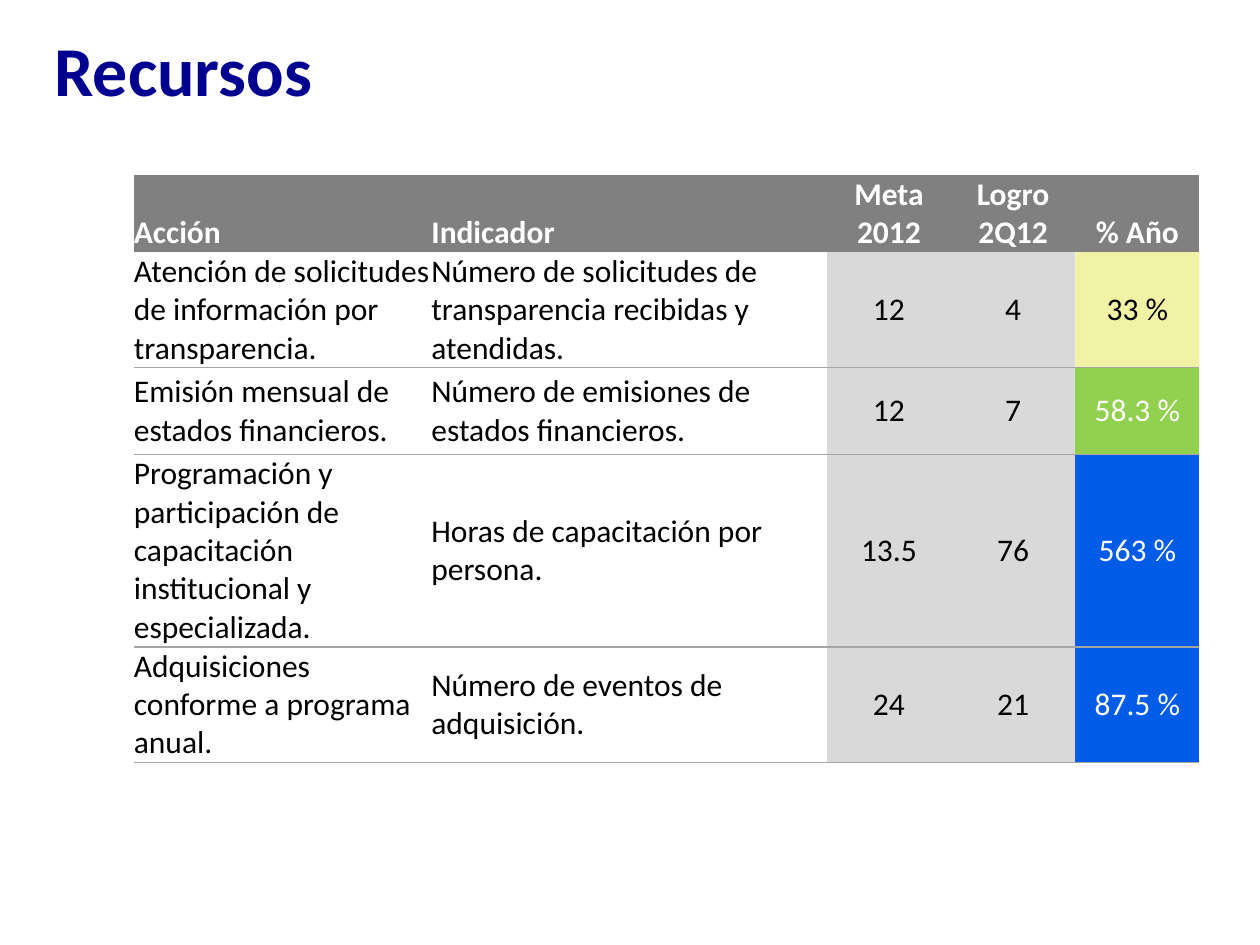
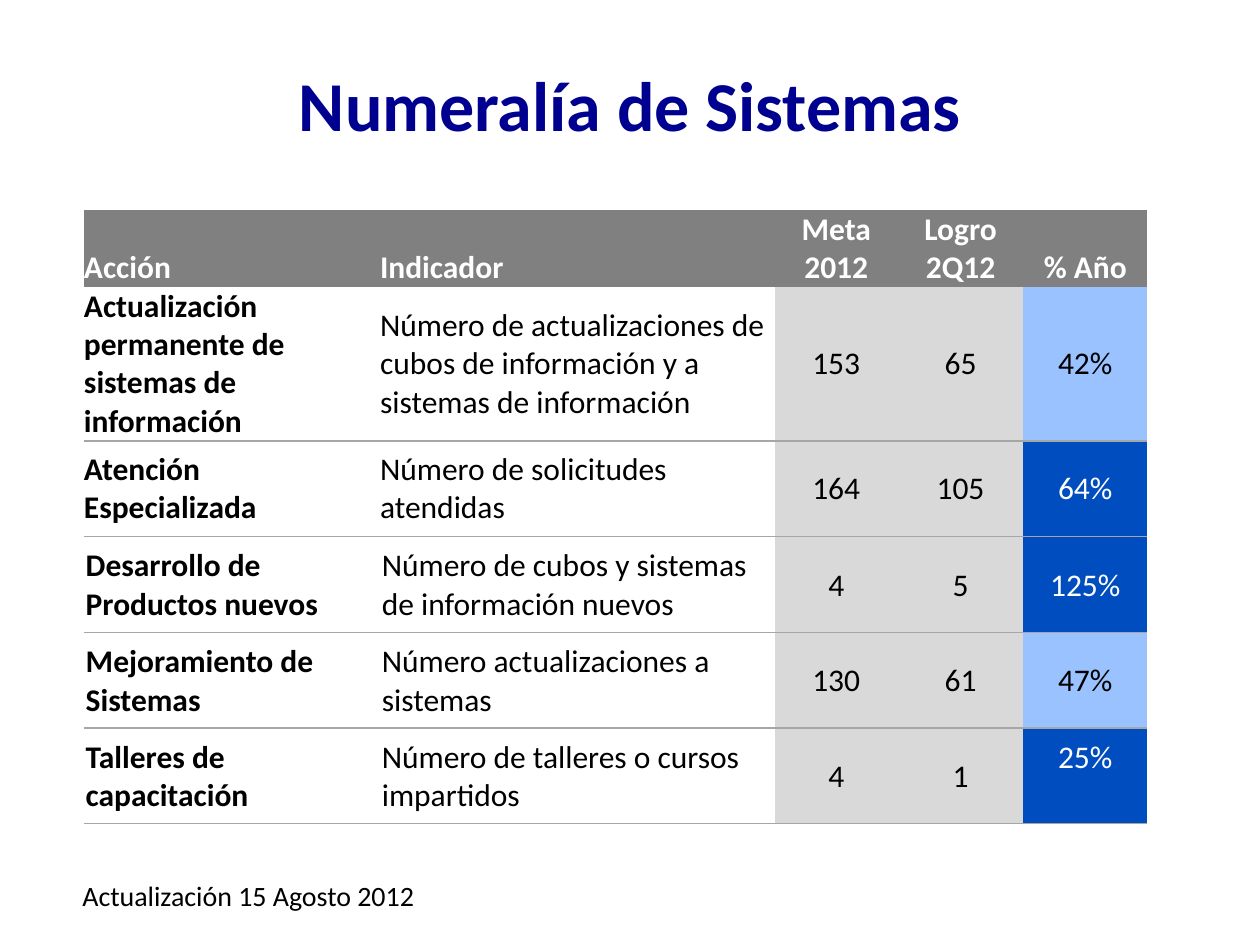
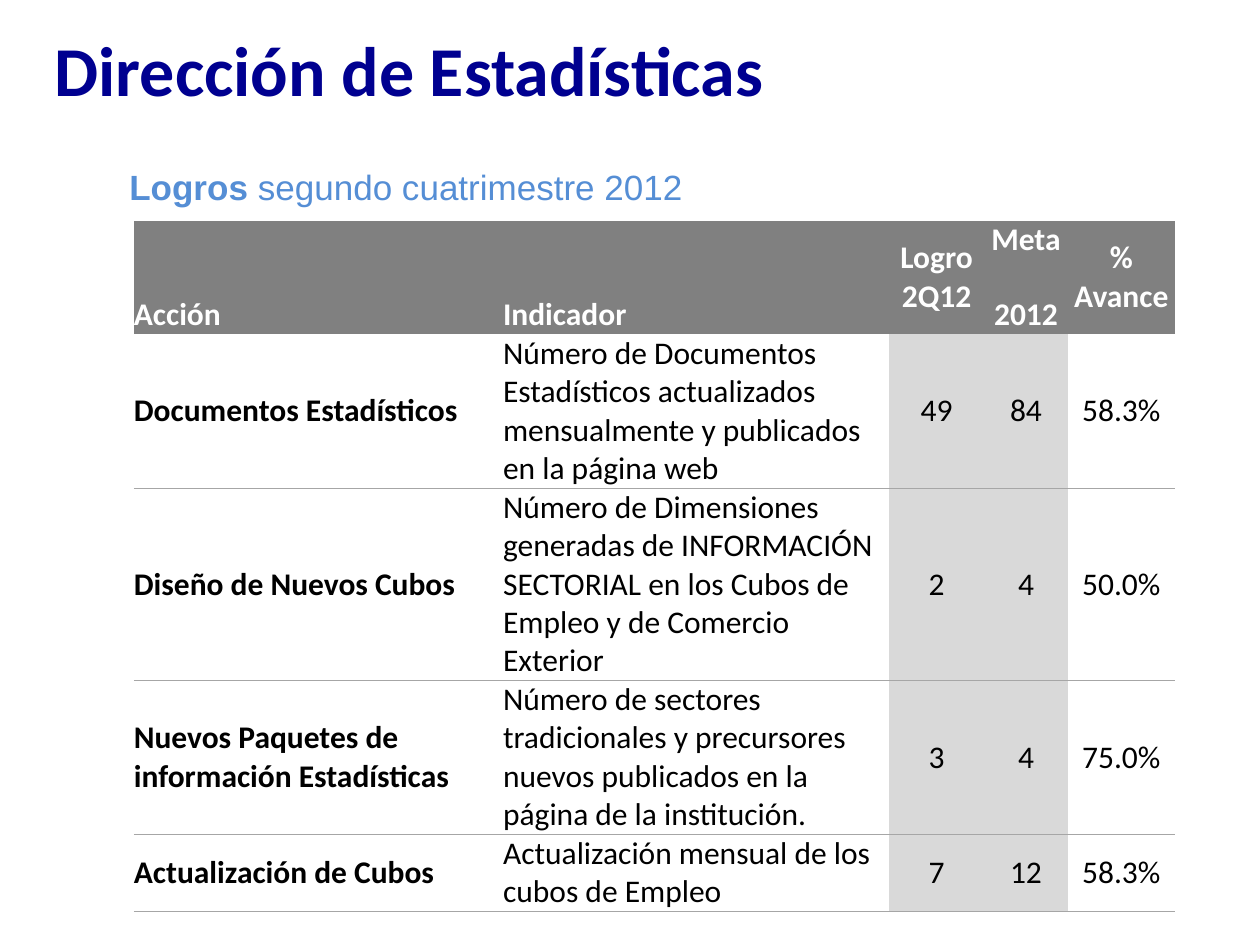
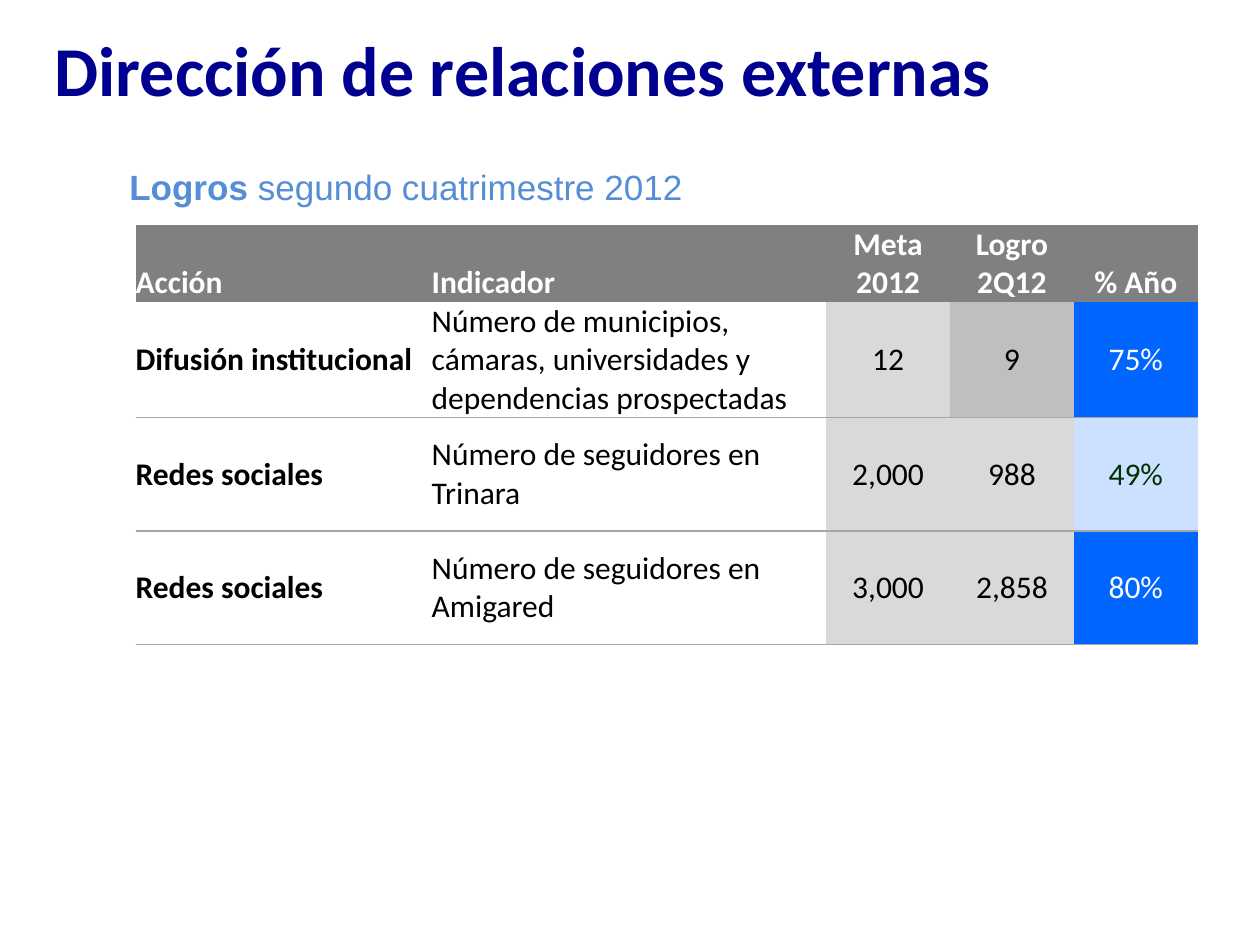
from dataclasses import dataclass

from lxml.etree import SubElement
from pptx import Presentation
from pptx.dml.color import RGBColor
from pptx.enum.text import MSO_ANCHOR as Anchor, PP_ALIGN as Align
from pptx.oxml import parse_xml
from pptx.oxml.ns import nsdecls, qn
from pptx.util import Pt

TITLE_ONLY = 5
NO_STYLE = "{2D5ABB26-0587-4C30-8999-92F81FD0307C}"


@dataclass(frozen=True)
class Theme:
    title_font: str = "Calibri"
    text_font: str = "Calibri"
    subtitle_font: str = "Arial"
    title_size: int = 40
    title_leading: int = 36
    subtitle_size: int = 20
    table_size: int = 18
    note_size: int = 16
    navy: str = "000090"
    sky: str = "558ED5"
    white: str = "FFFFFF"
    black: str = "000000"
    header: str = "808080"
    rule: str = "A6A6A6"
    number: str = "D9D9D9"
    number_dark: str = "BFBFBF"
    yellow: str = "DCDC0C"
    green: str = "92D050"
    blue: str = "005CE7"
    deep_blue: str = "004DBF"
    light_blue: str = "99C2FF"
    bright_blue: str = "0066FF"
    pale_blue: str = "CCE0FF"
    dark_green: str = "003300"


THEME = Theme()


@dataclass(frozen=True)
class Box:
    left: float
    top: float
    width: float
    height: float

    def lengths(self):
        return Pt(self.left), Pt(self.top), Pt(self.width), Pt(self.height)


@dataclass(frozen=True)
class Mark:
    """A centred figure with its cell colours; lift raises it from the middle."""
    text: str
    fill: str = THEME.number
    ink: str = THEME.black
    alpha: int = 100
    lift: float = 0


@dataclass(frozen=True)
class Goals:
    """A table of goals: headings, then action, indicator and three figures a row."""
    left: float
    top: float
    columns: tuple
    heights: tuple
    headings: tuple
    rows: tuple
    rule: float = 1
    bold_actions: bool = True
    heading_anchor: Anchor = Anchor.BOTTOM
    heading_gap: float = 0
    inset_from: int = 99


def style(para, font, size, color, bold=False):
    para.font.name = font
    para.font.size = Pt(size)
    para.font.bold = bold
    para.font.color.rgb = RGBColor.from_string(color)


def add_title(page, text, box, align=Align.LEFT, anchor=Anchor.MIDDLE):
    title = page.shapes.title
    title.left, title.top, title.width, title.height = box.lengths()
    frame = title.text_frame
    frame.text = text
    frame.word_wrap = True
    frame.vertical_anchor = anchor
    para = frame.paragraphs[0]
    para.alignment = align
    para.line_spacing = Pt(THEME.title_leading)
    style(para, THEME.title_font, THEME.title_size, THEME.navy, True)
    return title


def add_subtitle(page, box):
    frame = page.shapes.add_textbox(*box.lengths()).text_frame
    frame.word_wrap = True
    para = frame.paragraphs[0]
    style(para, THEME.subtitle_font, THEME.subtitle_size, THEME.sky)
    lead = para.add_run()
    lead.text = "Logros"
    lead.font.bold = True
    para.add_run().text = " segundo cuatrimestre 2012"


def add_note(page, text, box):
    frame = page.shapes.add_textbox(*box.lengths()).text_frame
    frame.word_wrap = False
    frame.text = text
    style(frame.paragraphs[0], THEME.text_font, THEME.note_size, THEME.black)


def fill_cell(cell, text, color, bold, align, fill=None, anchor=Anchor.MIDDLE,
              inset=0, gap=0):
    cell.margin_left = cell.margin_right = cell.margin_top = Pt(inset)
    cell.margin_bottom = 0
    cell.vertical_anchor = anchor
    if fill:
        cell.fill.solid()
        cell.fill.fore_color.rgb = RGBColor.from_string(fill)
    else:
        cell.fill.background()
    cell.text = text
    for index, para in enumerate(cell.text_frame.paragraphs):
        para.alignment = align
        if index and gap:
            para.space_before = Pt(gap)
        style(para, THEME.text_font, THEME.table_size, color, bold)


def fill_mark(cell, mark, inset):
    fill_cell(cell, mark.text, mark.ink, False, Align.CENTER, mark.fill, inset=inset)
    if mark.lift:
        cell.margin_bottom = Pt(mark.lift)
    if mark.alpha < 100:
        color = cell._tc.tcPr.find(".//" + qn("a:srgbClr"))
        SubElement(color, qn("a:alpha")).set("val", str(mark.alpha * 1000))


def rule_below(cell, width):
    cell._tc.get_or_add_tcPr().insert(0, parse_xml(
        f'<a:lnB {nsdecls("a")} w="{Pt(width)}"><a:solidFill>'
        f'<a:srgbClr val="{THEME.rule}"/></a:solidFill></a:lnB>'))


def add_goals(page, goals):
    box = Box(goals.left, goals.top, sum(goals.columns), sum(goals.heights))
    table = page.shapes.add_table(
        len(goals.heights), len(goals.columns), *box.lengths()).table
    table.first_row = table.horz_banding = False
    table._tbl.tblPr.find(qn("a:tableStyleId")).text = NO_STYLE
    for column, width in zip(table.columns, goals.columns):
        column.width = Pt(width)
    for row, height in zip(table.rows, goals.heights):
        row.height = Pt(height)

    for index, heading in enumerate(goals.headings):
        is_text = index < 2
        fill_cell(table.cell(0, index), heading, THEME.white, True,
                  Align.JUSTIFY if is_text else Align.CENTER, THEME.header,
                  Anchor.BOTTOM if is_text else goals.heading_anchor,
                  gap=goals.heading_gap)

    for number, (action, indicator, *figures) in enumerate(goals.rows, 1):
        cells = table.rows[number].cells
        inset = 1 if number >= goals.inset_from else 0
        fill_cell(cells[0], action, THEME.black, goals.bold_actions, Align.LEFT,
                  inset=inset)
        fill_cell(cells[1], indicator, THEME.black, False, Align.LEFT, inset=inset)
        for index, figure in enumerate(figures, 2):
            mark = figure if isinstance(figure, Mark) else Mark(figure)
            fill_mark(cells[index], mark, inset)
        for cell in cells:
            rule_below(cell, goals.rule)


TITLE_BOX = Box(24, 12, 600, 66)
SUBTITLE_BOX = Box(66.8, 91.2, 594, 34.5)
YEAR_HEADINGS = ("Acción", "Indicador", "Meta 2012", "Logro 2Q12", "% Año")


def white_on(text, fill, lift=0):
    return Mark(text, fill, THEME.white, lift=lift)


def plain(text):
    return Mark(text, THEME.white)


RESOURCES = Goals(
    76.5, 100, (170, 226, 71, 71, 71), (44, 66, 49.7, 110, 66), YEAR_HEADINGS,
    (
        ("Atención de solicitudes de información por transparencia.",
         "Número de solicitudes de transparencia recibidas y atendidas.",
         "12", "4", Mark("33 %", THEME.yellow, alpha=36)),
        ("Emisión mensual de estados financieros.",
         "Número de emisiones de estados financieros.",
         "12", "7", white_on("58.3 %", THEME.green)),
        ("Programación y participación de capacitación institucional y especializada.",
         "Horas de capacitación por persona.",
         "13.5", "76", white_on("563 %", THEME.blue)),
        ("Adquisiciones conforme a programa anual.",
         "Número de eventos de adquisición.",
         "24", "21", white_on("87.5 %", THEME.blue)),
    ),
    bold_actions=False)

SYSTEMS = Goals(
    48, 120, (169.2, 225.4, 70.6, 71.5, 71), (44, 88) + (54.7,) * 4, YEAR_HEADINGS,
    (
        ("Actualización permanente de sistemas de información",
         "Número de actualizaciones de cubos de información y a sistemas de información",
         "153", "65", Mark("42%", THEME.light_blue)),
        ("Atención\nEspecializada", "Número de solicitudes atendidas",
         "164", "105", white_on("64%", THEME.deep_blue)),
        ("Desarrollo de Productos nuevos",
         "Número de cubos y sistemas de información nuevos",
         "4", "5", white_on("125%", THEME.deep_blue)),
        ("Mejoramiento de Sistemas", "Número actualizaciones a sistemas",
         "130", "61", Mark("47%", THEME.light_blue)),
        ("Talleres de capacitación", "Número de talleres o cursos impartidos",
         "4", "1", white_on("25%", THEME.deep_blue, lift=22)),
    ),
    inset_from=3)

STATISTICS = Goals(
    76.5, 126, (211, 220.5, 54.5, 47.7, 61.3), (65, 86.4, 108, 86.4, 43.2),
    ("Acción", "Indicador", "Logro 2Q12", "Meta\n2012", "% Avance"),
    (
        ("Documentos Estadísticos",
         "Número de Documentos Estadísticos actualizados mensualmente y publicados "
         "en la página web",
         "49", "84", plain("58.3%")),
        ("Diseño de Nuevos Cubos",
         "Número de Dimensiones generadas de INFORMACIÓN SECTORIAL en los Cubos de "
         "Empleo y de Comercio Exterior",
         "2", "4", plain("50.0%")),
        ("Nuevos Paquetes de información Estadísticas",
         "Número de sectores tradicionales y precursores nuevos publicados en la "
         "página de la institución.",
         "3", "4", plain("75.0%")),
        ("Actualización de Cubos", "Actualización mensual de los cubos de Empleo",
         "7", "12", plain("58.3%")),
    ),
    rule=0.5, heading_anchor=Anchor.MIDDLE, heading_gap=21)

RELATIONS = Goals(
    77.5, 128.7, (169.2, 225.4, 70.8, 70.8, 70.8), (43.2,) + (64.8,) * 3,
    YEAR_HEADINGS,
    (
        ("Difusión institucional",
         "Número de municipios, cámaras, universidades y dependencias prospectadas",
         "12", Mark("9", THEME.number_dark), white_on("75%", THEME.bright_blue)),
        ("Redes sociales", "Número de seguidores en Trinara",
         "2,000", "988", Mark("49%", THEME.pale_blue, THEME.dark_green)),
        ("Redes sociales", "Número de seguidores en Amigared",
         "3,000", "2,858", white_on("80%", THEME.bright_blue)),
    ))


def add_goals_page(deck, title, goals):
    page = deck.slides.add_slide(deck.slide_layouts[TITLE_ONLY])
    add_title(page, title, TITLE_BOX)
    add_goals(page, goals)
    return page


def add_achievements_page(deck, title, goals):
    """A goals page with the period's subtitle above the table."""
    page = add_goals_page(deck, title, goals)
    add_subtitle(page, SUBTITLE_BOX)


def add_figures_page(deck, title, note, goals):
    """A goals page with a centred title and a dated note below the table."""
    page = deck.slides.add_slide(deck.slide_layouts[TITLE_ONLY])
    heading = add_title(page, title, Box(0, 41, 720, 84), Align.CENTER, Anchor.TOP)
    heading.text_frame.margin_top = Pt(6)
    add_goals(page, goals)
    add_note(page, note, Box(40, 498.3, 207, 27))


def main():
    deck = Presentation()
    deck.slide_width, deck.slide_height = Pt(720), Pt(540)
    add_goals_page(deck, "Recursos", RESOURCES)
    add_figures_page(deck, "Numeralía de Sistemas", "Actualización 15 Agosto 2012",
                     SYSTEMS)
    add_achievements_page(deck, "Dirección de Estadísticas", STATISTICS)
    add_achievements_page(deck, "Dirección de relaciones externas", RELATIONS)
    deck.save("out.pptx")


if __name__ == "__main__":
    main()
